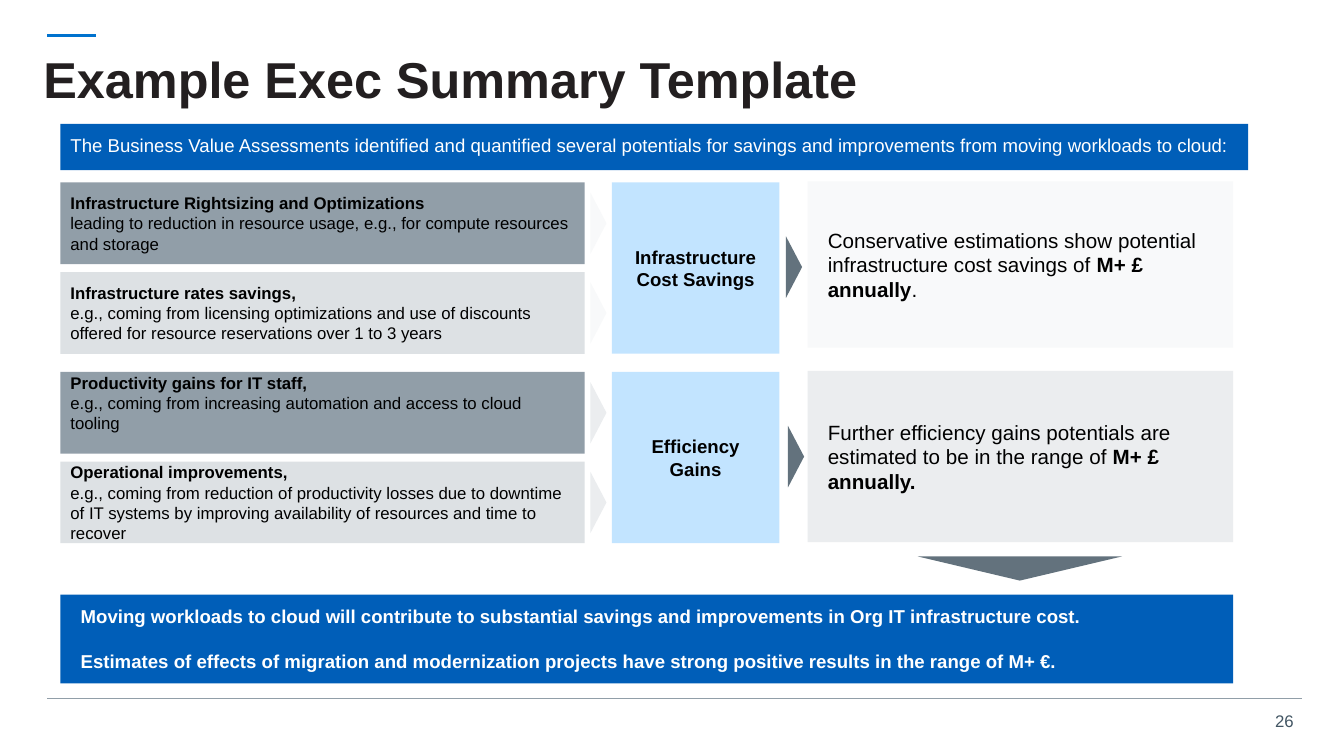
"""Build the executive summary slide on savings from moving workloads to cloud."""
from dataclasses import dataclass

import pptx
import pptx.dml.color
import pptx.enum.shapes
import pptx.enum.text
import pptx.oxml
import pptx.util
from pptx.util import Inches

SHAPES = pptx.enum.shapes.MSO_SHAPE
ALIGN = pptx.enum.text.PP_ALIGN
ANCHOR = pptx.enum.text.MSO_ANCHOR

BLACK, WHITE = "000000", "FFFFFF"
BLUE, PALE_BLUE = "005EB8", "C2E4FF"
SLATE, GREY, PALE_GREY = "63727D", "919EA8", "DDE1E4"

LEFT, FIRST_TOP = 0.6, 1.81
ROW_PITCH, GROUP_PITCH = 0.89, 1.88
DRIVER_HEIGHT, CATEGORY_HEIGHT = 0.81, 1.7

Run = tuple[str, bool]


@dataclass
class Driver:
    heading: str
    detail: str
    fill: str
    bottom_inset: float = 0.05


@dataclass
class Benefit:
    category: list[list[Run]]
    drivers: list[Driver]
    outcome: list[Run]
    outcome_fill: str
    outcome_height: float
    arrow_x: float


BENEFITS = [
    Benefit(
        [[("Infrastructure Cost Savings", True)]],
        [
            Driver("Infrastructure Rightsizing and Optimizations",
                   "leading to reduction in resource usage, e.g., for compute resources and storage", GREY),
            Driver("Infrastructure rates savings,",
                   "e.g., coming from licensing optimizations and use of discounts "
                   "offered for resource reservations over 1 to 3 years", PALE_GREY),
        ],
        [("Conservative estimations show potential infrastructure cost savings of ", False),
         ("M+ £ annually", True), (".", False)],
        "F8F9FA", 1.65, 7.875,
    ),
    Benefit(
        [[("Efficiency", True)], [("Gains", True)]],
        [
            Driver("Productivity gains for IT staff,",
                   "e.g., coming from increasing automation and access to cloud tooling", GREY, 0.25),
            Driver("Operational improvements,",
                   "e.g., coming from reduction of productivity losses due to downtime of IT systems "
                   "by improving availability of resources and time to recover", PALE_GREY),
        ],
        [("Further efficiency gains potentials are estimated to be in the range of ", False),
         ("M+ £ annually.", True)],
        "EBEDEF", 1.7, 7.895,
    ),
]


def rgb(value: str) -> pptx.dml.color.RGBColor:
    return pptx.dml.color.RGBColor.from_string(value)


def write(holder, paragraphs: list[list[Run]], *, size: float, color: str = BLACK,
          align=ALIGN.LEFT, anchor=ANCHOR.MIDDLE, insets=(0.1, 0.1, 0.1, 0.1),
          space_before: float = 0, line_spacing: float = 1.0) -> None:
    frame = holder.text_frame
    frame.word_wrap = True
    frame.vertical_anchor = anchor
    (frame.margin_left, frame.margin_top,
     frame.margin_right, frame.margin_bottom) = map(Inches, insets)
    for index, runs in enumerate(paragraphs):
        paragraph = frame.add_paragraph() if index else frame.paragraphs[0]
        paragraph.alignment = align
        paragraph.line_spacing = line_spacing
        paragraph.space_before = pptx.util.Pt(space_before if index else 0)
        for text, bold in runs:
            run = paragraph.add_run()
            run.text = text.rstrip("\n")
            run.font.name = "Arial"
            run.font.size = pptx.util.Pt(size)
            run.font.bold = bold
            run.font.color.rgb = rgb(color)
            if text.endswith("\n"):
                paragraph.add_line_break()


def add_block(slide, left: float, top: float, width: float, height: float, fill: str,
              kind=SHAPES.RECTANGLE, rotation: float = 0):
    block = slide.shapes.add_shape(kind, Inches(left), Inches(top), Inches(width), Inches(height))
    block.shadow.inherit = False
    block.fill.solid()
    block.fill.fore_color.rgb = rgb(fill)
    block.line.fill.background()
    block.rotation = rotation
    return block


def add_pointer(slide, center_x: float, center_y: float, fill: str,
                base: float = 0.61, depth: float = 0.16, rotation: float = 90) -> None:
    add_block(slide, center_x - base / 2, center_y - depth / 2, base, depth, fill,
              SHAPES.ISOSCELES_TRIANGLE, rotation)


def add_rule(slide, start: float, end: float, y: float, color: str, weight: float) -> None:
    rule = slide.shapes.add_connector(pptx.enum.shapes.MSO_CONNECTOR.STRAIGHT,
                                      Inches(start), Inches(y), Inches(end), Inches(y))
    rule.line.color.rgb = rgb(color)
    rule.line.width = pptx.util.Pt(weight)
    properties = rule._element.spPr
    properties.append(properties.makeelement(pptx.oxml.ns.qn("a:effectLst"), {}))


def add_label(slide, left: float, top: float, width: float, height: float):
    return slide.shapes.add_textbox(Inches(left), Inches(top), Inches(width), Inches(height))


def add_benefit(slide, benefit: Benefit, top: float) -> None:
    for row, driver in enumerate(benefit.drivers):
        driver_top = top + row * ROW_PITCH
        driver_box = add_block(slide, LEFT, driver_top, 5.2, DRIVER_HEIGHT, driver.fill)
        write(driver_box, [[(driver.heading + "\n", True), (driver.detail, False)]],
              size=12, insets=(0.1, 0.05, 0.1, driver.bottom_inset))
        add_pointer(slide, 5.935, driver_top + DRIVER_HEIGHT / 2, benefit.outcome_fill)
    category = add_block(slide, 6.07, top, 1.66, CATEGORY_HEIGHT, PALE_BLUE)
    write(category, benefit.category, size=13.3, align=ALIGN.CENTER)
    add_pointer(slide, benefit.arrow_x, top + CATEGORY_HEIGHT / 2 - 0.01, SLATE)
    outcome = add_block(slide, 8.01, top - 0.01, 4.22, benefit.outcome_height, benefit.outcome_fill)
    write(outcome, [benefit.outcome], size=14.7, insets=(0.2, 0.1, 0.1, 0.1))


def main() -> None:
    deck = pptx.Presentation()
    deck.slide_width, deck.slide_height = Inches(13.33), Inches(7.5)
    slide = deck.slides.add_slide(deck.slide_layouts[6])

    add_rule(slide, 0.47, 0.95, 0.35, "0072CE", 2)
    add_rule(slide, 0.47, 12.91, 6.93, GREY, 0.75)
    write(add_label(slide, 12.42, 7, 0.51, 0.3), [[("26", False)]], size=12, color="425563",
          align=ALIGN.RIGHT, anchor=ANCHOR.TOP, insets=(0.1, 0.05, 0.1, 0.05))
    write(add_label(slide, 0.43, 0.34, 12.47, 0.95), [[("Example Exec Summary Template", True)]],
          size=36, color="231F20", insets=(0, 0, 0, 0), line_spacing=0.9)

    introduction = add_block(slide, LEFT, 1.23, 11.78, 0.46, BLUE)
    write(introduction, [[("The Business Value Assessments identified and quantified several potentials "
                           "for savings and improvements from moving workloads to cloud:", False)]],
          size=13.3, color=WHITE, anchor=ANCHOR.TOP)

    for group, benefit in enumerate(BENEFITS):
        add_benefit(slide, benefit, FIRST_TOP + group * GROUP_PITCH)

    add_pointer(slide, 10.115, 5.64, SLATE, base=2.03, depth=0.24, rotation=180)
    conclusion = add_block(slide, LEFT, 5.9, 11.63, 0.88, BLUE)
    write(conclusion,
          [[("Moving workloads to cloud will contribute to substantial savings and improvements "
             "in Org IT infrastructure cost.", True)],
           [("Estimates of effects of migration and modernization projects have strong positive "
             "results in the range of M+ €.", True)]],
          size=13.3, color=WHITE, anchor=ANCHOR.TOP, insets=(0.2, 0.1, 0.1, 0.1), space_before=16)

    deck.save("out.pptx")


if __name__ == "__main__":
    main()
